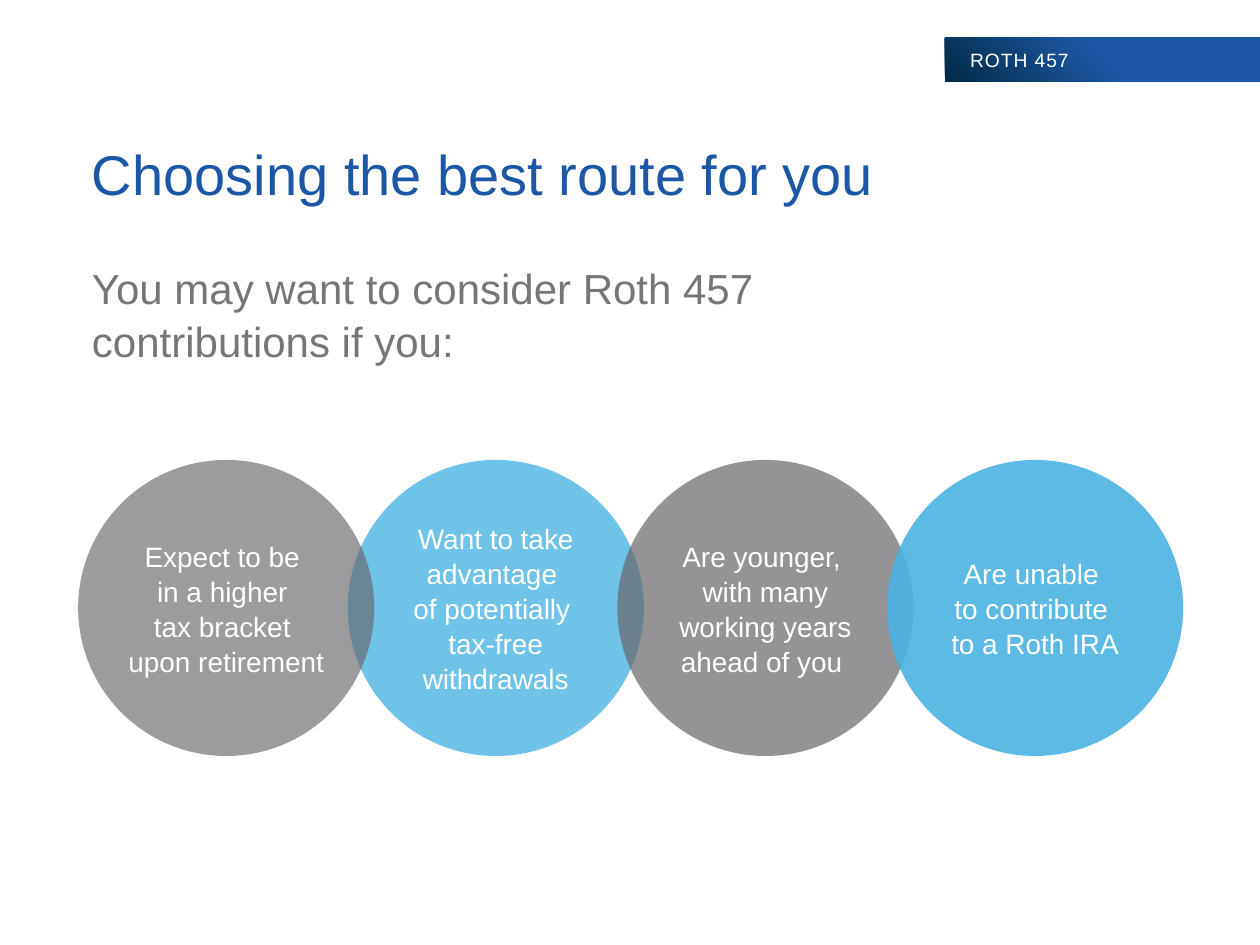
"""Build the slide on choosing Roth 457 contributions."""
from lxml import etree
from pptx import Presentation
from pptx.dml.color import RGBColor
from pptx.enum.shapes import MSO_SHAPE as Shape
from pptx.enum.text import MSO_ANCHOR as Anchor, PP_ALIGN as Align
from pptx.oxml.ns import qn
from pptx.util import Inches, Pt


def rgb(value):
    return RGBColor.from_string(value)


def write(shape, text, size, color, align=Align.LEFT, margins=(0.1, 0.05, 0.1, 0.05), spacing=1.0):
    frame = shape.text_frame
    frame.word_wrap = True
    frame.vertical_anchor = Anchor.MIDDLE
    frame.margin_left, frame.margin_top, frame.margin_right, frame.margin_bottom = map(Inches, margins)
    paragraph = frame.paragraphs[0]
    paragraph.text = text
    paragraph.alignment = align
    paragraph.line_spacing = spacing
    paragraph.space_before = Pt(0)
    paragraph.font.name = "Arial"
    paragraph.font.size = Pt(size)
    paragraph.font.color.rgb = rgb(color)
    return paragraph


BLUE, SKY, GRAY, WHITE = "1C57A5", "4BB3E3", "686669", "FFFFFF"
LINE_SPACING = 1.04
DIAMETER, STEP, LEFT, TOP = 2.35, 2.14, 0.62, 3.65

presentation = Presentation()
presentation.slide_width, presentation.slide_height = Inches(10), Inches(7.5)
slide = presentation.slides.add_slide(presentation.slide_layouts[0])

title, subtitle = slide.placeholders
title.left, title.top, title.width, title.height = map(Inches, (0.63, 0.69, 9.2, 1.36))
write(title, "Choosing the best route for you", 32, BLUE)
subtitle.left, subtitle.top, subtitle.width, subtitle.height = map(Inches, (0.63, 2.04, 7.43, 0.89))
write(subtitle, "You may want to consider Roth 457 contributions if you:", 24, "747678", spacing=LINE_SPACING)

banner = slide.shapes.add_shape(Shape.RECTANGLE, Inches(7.5), Inches(0.3), Inches(2.5), Inches(0.35))
banner.shadow.inherit = False
banner.line.fill.background()
banner.fill.gradient()
banner.fill.gradient_angle = 45
for stop, position, color in zip(banner.fill.gradient_stops, (0, 0.5), ("002B45", BLUE)):
    stop.position = position
    stop.color.rgb = rgb(color)
label = write(banner, "ROTH 457", 11, WHITE, margins=(0.2, 0.05, 0.1, 0.05))
label.runs[0]._r.get_or_add_rPr().set("spc", "50")

reasons = [
    (1, "Want to take advantage \vof potentially \vtax-free withdrawals", SKY, 80),
    (2, "Are younger, \vwith many working years ahead of you ", GRAY, 70),
    (3, "Are unable \vto contribute \vto a Roth IRA", SKY, 90),
    (0, "Expect to be \vin a higher \vtax bracket \vupon retirement", GRAY, 65),
]
for column, text, color, opacity in reasons:
    circle = slide.shapes.add_shape(
        Shape.OVAL, Inches(LEFT + column * STEP), Inches(TOP), Inches(DIAMETER), Inches(DIAMETER))
    circle.shadow.inherit = False
    circle.line.fill.background()
    circle.fill.solid()
    circle.fill.fore_color.rgb = rgb(color)
    fill_color = circle._element.spPr.find(qn("a:solidFill")).find(qn("a:srgbClr"))
    etree.SubElement(fill_color, qn("a:alpha")).set("val", str(opacity * 1000))
    write(circle, text, 16, WHITE, Align.CENTER, (0, 0, 0, 0), LINE_SPACING)

presentation.save("out.pptx")
